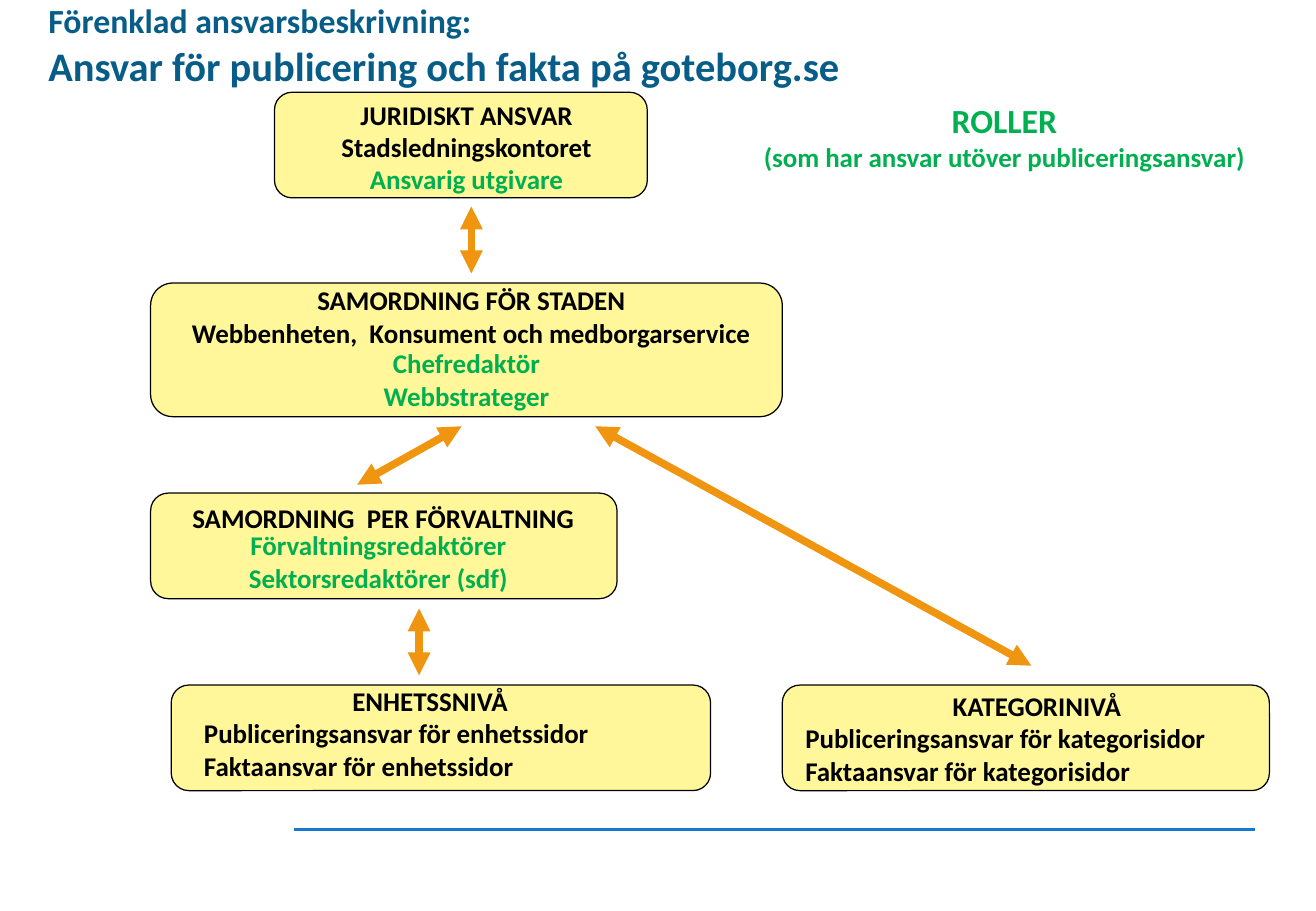
import pptx
import pptx.util
import pptx.dml.color
import pptx.enum.shapes
import pptx.enum.text
import pptx.oxml.ns
from lxml import etree

Pt = pptx.util.Pt
ALIGN = {"l": pptx.enum.text.PP_ALIGN.LEFT, "c": pptx.enum.text.PP_ALIGN.CENTER}

BLACK, GREEN, NAVY = "000000", "00B050", "075D88"
YELLOW, ORANGE, BLUE = "FFF799", "F09510", "1A79CC"

# left, top, width, height
BOXES = [
    (162.7, 54.7, 221, 62.6),
    (89.3, 167.8, 374.4, 79.2),
    (89.3, 292.3, 276.5, 62.6),
    (101.5, 406.1, 319.7, 62.6),
    (463.7, 406.1, 288.7, 62.6),
]

# x1, y1, x2, y2
ARROWS = [
    (279.4, 122.4, 279.4, 162),
    (273.6, 252.7, 211.7, 287.3),
    (248.4, 360.7, 248.4, 400.3),
    (352.8, 252.7, 611.3, 394.6),
]
FOOTER_LINE = (174.2, 491.8, 743.8, 491.8)

# left, width, vertical centre, colour, lines of (text, size, alignment)
TEXTS = [
    (21.6, 558.7, 26.5, NAVY, [
        ("Förenklad ansvarsbeskrivning:", 20, "l"),
        ("Ansvar för publicering och fakta på goteborg.se", 24, "l")]),
    (408.2, 374.4, 81, GREEN, [
        ("ROLLER", 20, "c"),
        ("(som har ansvar utöver publiceringsansvar)", 16, "c")]),
    (187.2, 178.6, 77.5, BLACK, [
        ("JURIDISKT ANSVAR", 16, "c"),
        ("Stadsledningskontoret", 16, "c")]),
    (187.2, 178.6, 105.8, GREEN, [("Ansvarig utgivare", 16, "c")]),
    (58.3, 442.1, 187.5, BLACK, [
        ("SAMORDNING FÖR STADEN", 16, "c"),
        ("Webbenheten,  Konsument och medborgarservice", 16, "c")]),
    (187.2, 178.6, 224.8, GREEN, [
        ("Chefredaktör", 16, "c"),
        ("Webbstrateger", 16, "c")]),
    (82.8, 288.7, 307, BLACK, [("SAMORDNING  PER FÖRVALTNING", 16, "c")]),
    (126, 196.6, 332.6, GREEN, [
        ("Förvaltningsredaktörer", 16, "c"),
        ("Sektorsredaktörer (sdf)", 16, "c")]),
    (113.8, 282.2, 434.5, BLACK, [
        ("ENHETSSNIVÅ", 16, "c"),
        ("Publiceringsansvar för enhetssidor", 16, "l"),
        ("Faktaansvar för enhetssidor", 16, "l")]),
    (470.2, 288.7, 437.4, BLACK, [
        ("KATEGORINIVÅ", 16, "c"),
        ("Publiceringsansvar för kategorisidor", 16, "l"),
        ("Faktaansvar för kategorisidor", 16, "l")]),
]
LINE_HEIGHT = 1.22


def rgb(value):
    return pptx.dml.color.RGBColor.from_string(value)


def add_box(s, left, top, width, height):
    sp = s.shapes.add_shape(pptx.enum.shapes.MSO_SHAPE.ROUNDED_RECTANGLE,
                            Pt(left), Pt(top), Pt(width), Pt(height))
    sp.shadow.inherit = False
    sp.fill.solid()
    sp.fill.fore_color.rgb = rgb(YELLOW)
    sp.line.color.rgb = rgb(BLACK)
    sp.line.width = Pt(0.75)


def add_line(s, x1, y1, x2, y2, color, width, arrows=False):
    c = s.shapes.add_connector(pptx.enum.shapes.MSO_CONNECTOR.STRAIGHT,
                               Pt(x1), Pt(y1), Pt(x2), Pt(y2))
    c.line.color.rgb = rgb(color)
    c.line.width = Pt(width)
    qn = pptx.oxml.ns.qn
    if arrows:
        ln = c.line._get_or_add_ln()
        for end in ("a:headEnd", "a:tailEnd"):
            etree.SubElement(ln, qn(end), type="triangle")
    etree.SubElement(c._element.spPr, qn("a:effectLst"))


def add_paragraph(p, text, size=16, color=BLACK, align="c"):
    p.alignment = ALIGN[align]
    r = p.add_run()
    r.text = text
    r.font.name = "Calibri"
    r.font.size = Pt(size)
    r.font.bold = True
    r.font.color.rgb = rgb(color)


def add_text(s, left, width, centre, color, lines):
    """Add a text box whose lines are centred vertically on a given height."""
    height = sum(size for _, size, _ in lines) * LINE_HEIGHT
    tf = s.shapes.add_textbox(Pt(left), Pt(centre - height / 2),
                              Pt(width), Pt(height)).text_frame
    tf.word_wrap = True
    tf.margin_top = tf.margin_bottom = 0
    tf.vertical_anchor = pptx.enum.text.MSO_ANCHOR.MIDDLE
    for i, (text, size, align) in enumerate(lines):
        p = tf.add_paragraph() if i else tf.paragraphs[0]
        add_paragraph(p, text, size=size, color=color, align=align)


def main():
    prs = pptx.Presentation()
    prs.slide_width, prs.slide_height = Pt(780), Pt(540)
    s = prs.slides.add_slide(prs.slide_layouts[6])
    add_line(s, *FOOTER_LINE, BLUE, 2)
    for box in BOXES:
        add_box(s, *box)
    for arrow in ARROWS:
        add_line(s, *arrow, ORANGE, 4.5, arrows=True)
    for text in TEXTS:
        add_text(s, *text)
    prs.save("out.pptx")


if __name__ == "__main__":
    main()
